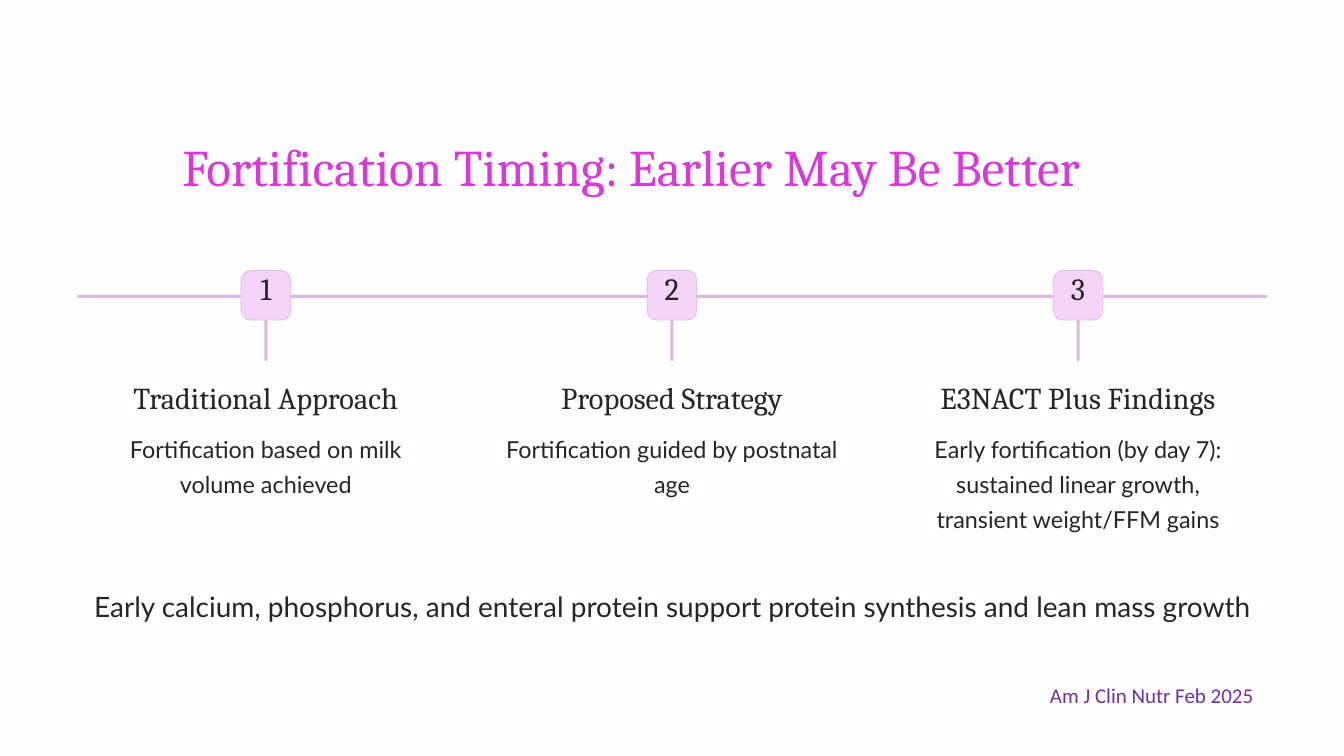
from dataclasses import dataclass

from pptx import Presentation
from pptx import util as u
from pptx.dml import color
from pptx.enum import shapes, text
from pptx.slide import Slide

COLORS = {
    "background": "FEFDFF",
    "title": "D73AD7",
    "line": "DABADD",
    "marker": "F4D4F7",
    "body": "272525",
    "citation": "7030A0",
}


@dataclass(frozen=True)
class Box:
    left: float
    top: float
    width: float
    height: float


@dataclass(frozen=True)
class TextStyle:
    font: str
    size: float
    color: str
    spacing: float | None = None
    centered: bool = True
    wrap: bool = False


@dataclass(frozen=True)
class Step:
    heading: str
    detail: str
    detail_height: float


TITLE = TextStyle("Cambria", 44, "title", 55)
NUMBER = TextStyle("Cambria", 26.5, "body", 26.5)
HEADING = TextStyle("Cambria", 26, "body", 27.5)
DETAIL = TextStyle("Lato", 20, "body", 30, wrap=True)
SUMMARY = TextStyle("Lato", 24, "body", 30)
CITATION = TextStyle("Calibri", 18, "citation", centered=False)

STEPS = [
    Step("Traditional Approach", "Fortification based on milk volume achieved", 2.13),
    Step("Proposed Strategy", "Fortification guided by postnatal age", 2.13),
    Step(
        "E3NACT Plus Findings",
        "Early fortification (by day 7): sustained linear growth, transient weight/FFM gains",
        3.2,
    ),
]

SLIDE_WIDTH, SLIDE_HEIGHT = 40.64, 22.86
STEP_GAP, STEP_WIDTH = 12.28, 10.11
LINE_LEFT, LINE_TOP, LINE_WIDTH, THICKNESS = 2.34, 8.92, 35.98, 0.09
MARKER_SIZE = 1.5


def rgb(name: str) -> color.RGBColor:
    return color.RGBColor.from_string(COLORS[name])


def centered_box(center: float, top: float, width: float, height: float) -> Box:
    return Box(center - width / 2, top, width, height)


def lengths(box: Box) -> tuple[u.Length, ...]:
    return tuple(u.Cm(value) for value in (box.left, box.top, box.width, box.height))


def add_rounded(
    slide: Slide, box: Box, fill: str, radius: float, outline: str | None = None
) -> None:
    shape = slide.shapes.add_shape(shapes.MSO_SHAPE.ROUNDED_RECTANGLE, *lengths(box))
    shape.adjustments[0] = radius
    shape.shadow.inherit = False
    shape.fill.solid()
    shape.fill.fore_color.rgb = rgb(fill)
    if outline:
        shape.line.color.rgb = rgb(outline)
        shape.line.width = u.Pt(0.6)
    else:
        shape.line.fill.background()


def add_text(slide: Slide, box: Box, wording: str, style: TextStyle) -> None:
    frame = slide.shapes.add_textbox(*lengths(box)).text_frame
    frame.margin_left = frame.margin_right = frame.margin_top = frame.margin_bottom = 0
    frame.word_wrap = style.wrap
    frame.text = wording
    paragraph = frame.paragraphs[0]
    paragraph.alignment = text.PP_ALIGN.CENTER if style.centered else text.PP_ALIGN.LEFT
    if style.spacing:
        paragraph.line_spacing = u.Pt(style.spacing)
    font = paragraph.runs[0].font
    font.name = style.font
    font.size = u.Pt(style.size)
    font.color.rgb = rgb(style.color)


def add_step(slide: Slide, index: int, step: Step) -> None:
    center = SLIDE_WIDTH / 2 + (index - 1) * STEP_GAP
    add_rounded(slide, centered_box(center, LINE_TOP, THICKNESS, 2), "line", 0.5)
    marker = centered_box(center, 8.18, MARKER_SIZE, MARKER_SIZE)
    add_rounded(slide, marker, "marker", 0.19, "line")
    add_text(slide, centered_box(center, 8.33, 0.94, 1.17), str(index + 1), NUMBER)
    add_text(slide, centered_box(center, 11.6, STEP_WIDTH, 0.97), step.heading, HEADING)
    detail = centered_box(center, 12.95, STEP_WIDTH, step.detail_height)
    add_text(slide, detail, step.detail, DETAIL)


def main() -> None:
    presentation = Presentation()
    presentation.slide_width = u.Cm(SLIDE_WIDTH)
    presentation.slide_height = u.Cm(SLIDE_HEIGHT)
    slide = presentation.slides.add_slide(presentation.slide_layouts[6])
    slide.background.fill.solid()
    slide.background.fill.fore_color.rgb = rgb("background")

    add_text(
        slide, Box(3, 4.01, 32.2, 1.96), "Fortification Timing: Earlier May Be Better", TITLE
    )
    add_rounded(slide, Box(LINE_LEFT, LINE_TOP, LINE_WIDTH, THICKNESS), "line", 0.5)
    for index, step in enumerate(STEPS):
        add_step(slide, index, step)
    add_text(
        slide,
        Box(LINE_LEFT, 17.79, LINE_WIDTH, 1.07),
        "Early calcium, phosphorus, and enteral protein support protein synthesis and lean mass growth",
        SUMMARY,
    )
    add_text(slide, Box(31.75, 20.63, 6.5, 0.77), "Am J Clin Nutr Feb 2025", CITATION)
    presentation.save("out.pptx")


if __name__ == "__main__":
    main()
